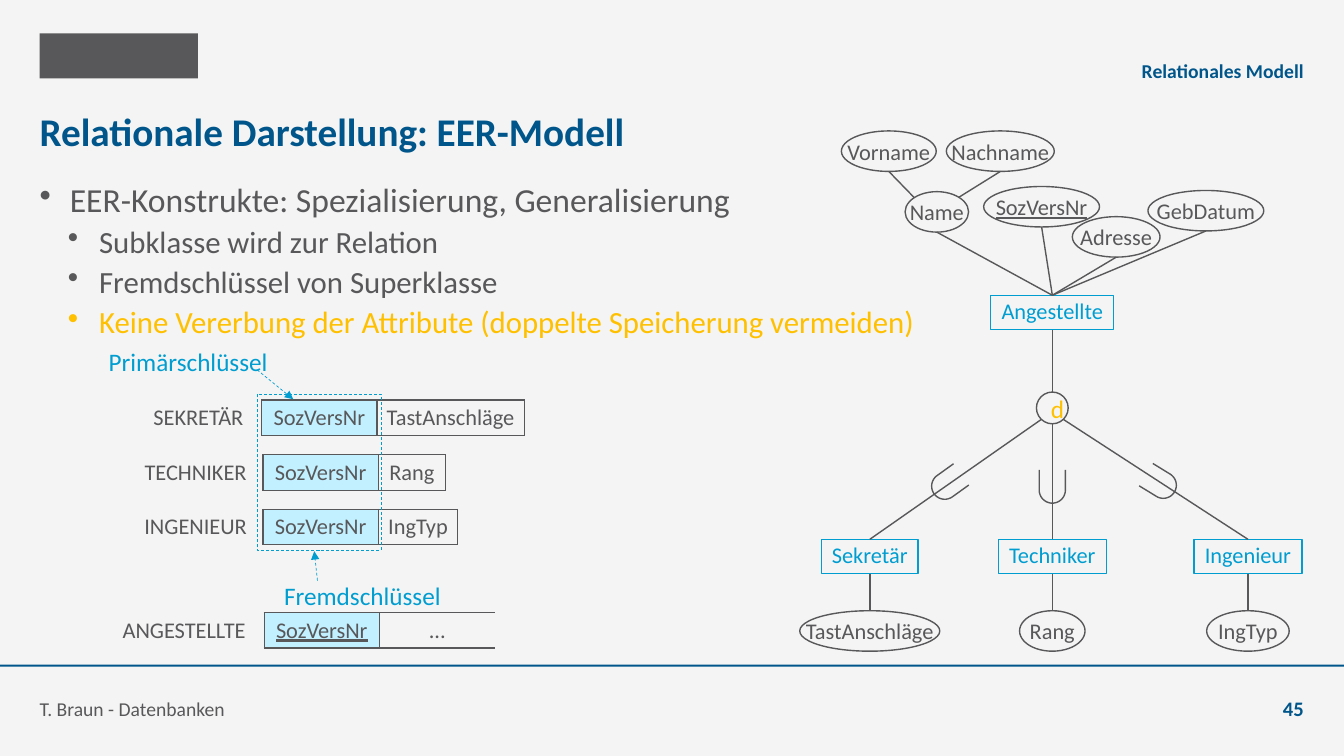
from dataclasses import dataclass
from math import cos, pi, sin

from lxml.etree import SubElement
from pptx import Presentation
from pptx.dml.color import RGBColor as RGB
from pptx.enum.dml import MSO_LINE
from pptx.enum.shapes import MSO_CONNECTOR, MSO_SHAPE
from pptx.enum.text import MSO_ANCHOR as ANCHOR, PP_ALIGN as ALIGN
from pptx.oxml.ns import qn
from pptx.util import Cm, Pt


@dataclass(frozen=True)
class Theme:
    font: str = "Calibri"
    paper: RGB = RGB(0xF4, 0xF4, 0xF4)
    ink: RGB = RGB(0x58, 0x58, 0x5A)
    navy: RGB = RGB(0x00, 0x56, 0x8A)
    cyan: RGB = RGB(0x00, 0x9D, 0xD1)
    pale: RGB = RGB(0xC3, 0xF0, 0xFF)
    gold: RGB = RGB(0xFF, 0xC0, 0x00)
    title: float = 28
    body: float = 24
    sub: float = 22
    note: float = 18
    label: float = 16
    number: float = 14.7
    footer: float = 14
    thin: float = 0.5
    line: float = 1


class Deck:
    def __init__(self, theme):
        self.t = theme
        self.prs = Presentation()
        self.prs.slide_width, self.prs.slide_height = Cm(33.87), Cm(19.05)

    def add_slide(self):
        self.s = self.prs.slides.add_slide(self.prs.slide_layouts[6])
        fill = self.s.background.fill
        fill.solid()
        fill.fore_color.rgb = self.t.paper

    def style(self, p, size, color, bold=False, underline=False, align=ALIGN.LEFT):
        p.alignment = align
        for r in p.runs:
            f = r.font
            f.name, f.size, f.color.rgb = self.t.font, Pt(size), color
            f.bold, f.underline = bold, underline

    def frame(self, tf, margins=(0, 0), anchor=ANCHOR.TOP, wrap=True):
        tf.margin_left = tf.margin_right = Cm(margins[0])
        tf.margin_top = tf.margin_bottom = Cm(margins[1])
        tf.vertical_anchor, tf.word_wrap = anchor, wrap

    def text(self, x, y, w, h, text, size, color, anchor=ANCHOR.BOTTOM, **style):
        tf = self.s.shapes.add_textbox(Cm(x), Cm(y), Cm(w), Cm(h)).text_frame
        self.frame(tf, anchor=anchor)
        tf.text = text
        self.style(tf.paragraphs[0], size, color, **style)

    def bullets(self, x, y, w, h, items):
        """Items are (text, level, colour)."""
        tf = self.s.shapes.add_textbox(Cm(x), Cm(y), Cm(w), Cm(h)).text_frame
        self.frame(tf)
        for i, (text, level, color) in enumerate(items):
            p = tf.add_paragraph() if i else tf.paragraphs[0]
            p.text, p.level = text, level
            p.line_spacing, p.space_before = 0.9, Pt(5)
            self.style(p, (self.t.body, self.t.sub)[level], color)
            pPr = p._p.get_or_add_pPr()
            left, hang = ((0.76, 0.76), (1.5, 0.79))[level]
            pPr.set("marL", str(Cm(left)))
            pPr.set("indent", str(-Cm(hang)))
            SubElement(pPr, qn("a:buChar")).set("char", "•")

    def shape(self, kind, x, y, w, h, fill=None, line=None, width=1, dash=None):
        sp = self.s.shapes.add_shape(kind, Cm(x), Cm(y), Cm(w), Cm(h))
        self.paint(sp, fill, line, width, dash)
        return sp

    def paint(self, sp, fill, line, width, dash=None):
        sp.shadow.inherit = False
        for target, color in ((sp.fill, fill), (sp.line.fill, line)):
            if color is None:
                target.background()
            else:
                target.solid()
                target.fore_color.rgb = color
        if line is not None:
            sp.line.width, sp.line.dash_style = Pt(width), dash

    def node(self, kind, cx, y, w, h, text, color, underline=False):
        """Labelled box or ellipse, centred on cx."""
        sp = self.shape(kind, cx - w / 2, y, w, h, self.t.paper, color, self.t.line)
        self.frame(sp.text_frame, (0.25, 0.13), ANCHOR.MIDDLE, wrap=False)
        sp.text_frame.text = text
        p = sp.text_frame.paragraphs[0]
        self.style(p, self.t.label, color, underline=underline, align=ALIGN.CENTER)
        return sp

    def entity(self, cx, y, w, text):
        sp = self.node(MSO_SHAPE.RECTANGLE, cx, y, w, 0.87, text, self.t.cyan)
        sp.text_frame.paragraphs[0].line_spacing = 0.9
        return sp

    def attribute(self, cx, y, w, text, underline=False):
        self.node(MSO_SHAPE.OVAL, cx, y, w, 1.02, text, self.t.ink, underline)

    def line(self, start, end, color=None, width=1, arrow=False):
        c = self.s.shapes.add_connector(MSO_CONNECTOR.STRAIGHT, *map(Cm, start + end))
        c.line.color.rgb, c.line.width = color or self.t.ink, Pt(width)
        if arrow:
            c.line.dash_style = MSO_LINE.DASH
            SubElement(c.line._get_or_add_ln(), qn("a:tailEnd")).set("type", "triangle")
        SubElement(c._element.spPr, qn("a:effectLst"))
        return c

    def link(self, box, side, end):
        self.line((0, 0), end).begin_connect(box, side)

    def subset_sign(self, cx, cy, rotation):
        """U-shaped sign, open at the top before it is turned."""
        r, h, steps = 0.33, 0.84, 24
        top, bend = cy - h / 2, cy + h / 2 - r
        arc = [(cx + r * cos(pi * i / steps), bend + r * sin(pi * i / steps))
               for i in range(steps + 1)]
        fb = self.s.shapes.build_freeform(Cm(cx + r), Cm(top))
        fb.add_line_segments([(Cm(x), Cm(y)) for x, y in arc + [(cx - r, top)]], close=False)
        sp = fb.convert_to_shape()
        self.paint(sp, None, self.t.ink, self.t.line)
        sp.rotation = rotation

    def relation(self, x, y, widths, texts, open_end=False, underline=False):
        """One-row table: a bare name, the key, and a further column."""
        tbl = self.s.shapes.add_table(1, 3, Cm(x), Cm(y), Cm(sum(widths)), Cm(0.89)).table
        tbl.first_row = tbl.horz_banding = False
        sides = ("R", "LRTB", "LTB" if open_end else "LRTB")
        for i, (w, text) in enumerate(zip(widths, texts)):
            tbl.columns[i].width = Cm(w)
            cell = tbl.cell(0, i)
            cell.text = text
            cell.margin_left = cell.margin_right = Cm(0.2)
            cell.margin_top = cell.margin_bottom = Cm(0.1)
            self.style(cell.text_frame.paragraphs[0], self.t.label, self.t.ink,
                       underline=underline and i == 1, align=ALIGN.CENTER)
            self.borders(cell, sides[i])
            if i == 1:
                cell.fill.solid()
                cell.fill.fore_color.rgb = self.t.pale
            else:
                cell.fill.background()

    def borders(self, cell, sides):
        tcPr = cell._tc.get_or_add_tcPr()
        for side in "LRTB":
            ln = SubElement(tcPr, qn(f"a:ln{side}"), w=str(Pt(self.t.line)))
            if side in sides:
                fill = SubElement(ln, qn("a:solidFill"))
                SubElement(fill, qn("a:srgbClr")).set("val", str(self.t.ink))
            else:
                SubElement(ln, qn("a:noFill"))


def main():
    t = Theme()
    d = Deck(t)
    d.add_slide()
    box, oval = MSO_SHAPE.RECTANGLE, MSO_SHAPE.OVAL

    # Page frame
    d.shape(box, 1, 0.84, 3.99, 1.14, fill=t.ink)
    d.shape(box, 0, 16.75, 33.87, 0.05, fill=t.navy)
    d.text(1, 2.51, 31.88, 1.6, "Relationale Darstellung: EER-Modell", t.title, t.navy,
           ANCHOR.MIDDLE, bold=True)
    d.text(9.98, 1.09, 22.88, 1, "Relationales Modell", t.footer, t.navy,
           bold=True, align=ALIGN.RIGHT)
    d.text(1, 17.15, 23.37, 1, "T. Braun - Datenbanken", t.footer, t.ink)
    d.text(30.86, 17.15, 2, 1, "45", t.number, t.navy, bold=True, align=ALIGN.RIGHT)
    d.bullets(1, 4.62, 31.88, 11.79, [
        ("EER-Konstrukte: Spezialisierung, Generalisierung", 0, t.ink),
        ("Subklasse wird zur Relation", 1, t.ink),
        ("Fremdschlüssel von Superklasse", 1, t.ink),
        ("Keine Vererbung der Attribute (doppelte Speicherung vermeiden)", 1, t.gold)])

    # Relations
    subclasses = [("SEKRETÄR", "TastAnschläge", 3.4, 3.2, 3.71),
                  ("TECHNIKER", "Rang", 3.23, 3.4, 1.7),
                  ("INGENIEUR", "IngTyp", 3.23, 3.4, 2.01)]
    for i, (name, column, x, name_w, column_w) in enumerate(subclasses):
        d.relation(x, 10.08 + 1.38 * i, (name_w, 2.9, column_w), (name, "SozVersNr", column))
    d.relation(2.62, 15.44, (4.04, 2.9, 2.92), ("ANGESTELLTE", "SozVersNr", "..."),
               open_end=True, underline=True)
    d.shape(box, 6.48, 9.93, 3.12, 3.94, line=t.cyan, width=t.thin, dash=MSO_LINE.DASH)
    for x, y, text, start, end in (
            (2.74, 8.72, "Primärschlüssel", (6.48, 9.32), (7.39, 10.06)),
            (7.16, 14.63, "Fremdschlüssel", (8, 14.63), (7.92, 13.89))):
        d.text(x, y, 4.2, 0.76, text, t.note, t.cyan, ANCHOR.TOP)
        d.line(start, end, t.cyan, t.thin, arrow=True)

    # Superclass with its attributes
    axis = 26.52
    employee = d.entity(axis, 7.44, 3.1, "Angestellte")
    for cx, y, w, text in ((26.25, 4.7, 2.92, "SozVersNr"), (28.13, 5.46, 2.21, "Adresse"),
                           (30.39, 4.8, 2.92, "GebDatum"), (23.61, 4.83, 1.6, "Name")):
        d.attribute(cx, y, w, text, underline=text == "SozVersNr")
        d.link(employee, 0, (cx, y + 1.02))
    for cx, w, text, name_x in ((22.4, 2.39, "Vorname", 23.04), (25.21, 2.72, "Nachname", 24.15)):
        d.attribute(cx, 3.3, w, text)
        d.line((name_x, 4.98), (cx, 4.32))

    # Disjoint specialisation
    circle = d.shape(oval, axis - 0.4, 9.88, 0.8, 0.8, line=t.ink, width=t.line)
    d.frame(circle.text_frame, (0.25, 0.13), ANCHOR.MIDDLE)
    circle.text_frame.text = "d"
    d.style(circle.text_frame.paragraphs[0], t.note, t.gold, align=ALIGN.CENTER)
    d.link(employee, 2, (axis, 9.88))
    for cx, w, text, attr, attr_w, joint, sign, turn in (
            (21.92, 2.44, "Sekretär", "TastAnschläge", 3.53, (26.24, 10.57), (23.88, 12.2), 54.3),
            (axis, 2.72, "Techniker", "Rang", 1.65, (axis, 10.68), (axis, 12.26), 0),
            (31.45, 2.72, "Ingenieur", "IngTyp", 2.08, (26.8, 10.57), (29.24, 12.18), -58.5)):
        subclass = d.entity(cx, 13.59, w, text)
        d.attribute(cx, 15.39, attr_w, attr)
        d.link(subclass, 0, joint)
        d.link(subclass, 2, (cx, 15.39))
        d.subset_sign(*sign, turn)

    d.prs.save("out.pptx")


if __name__ == "__main__":
    main()
